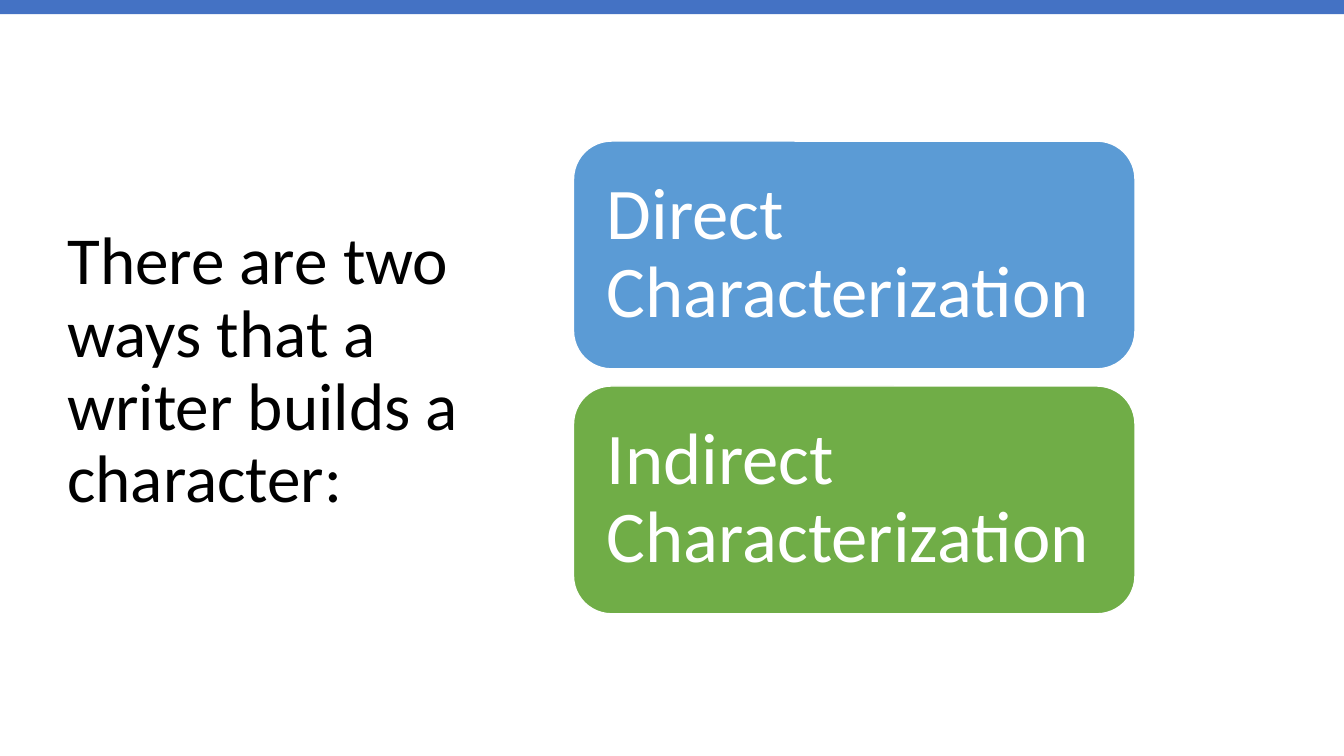
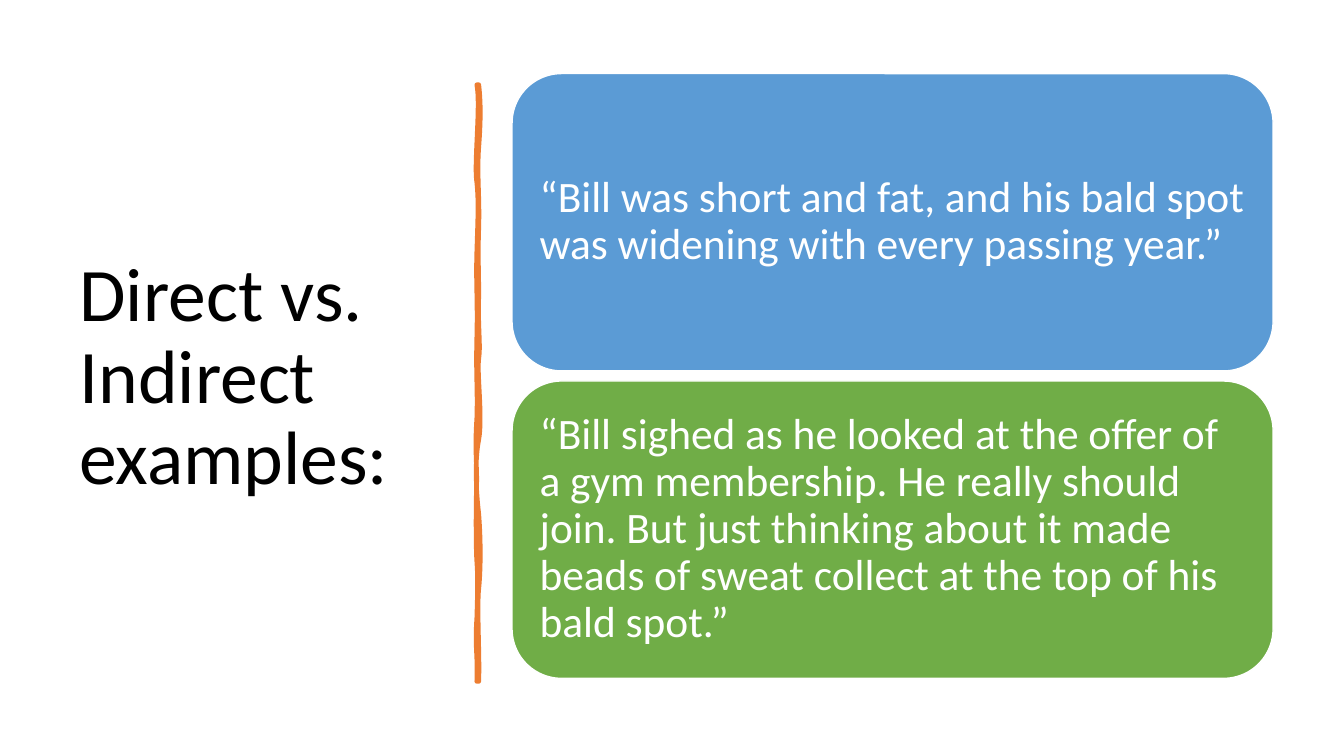
"""Build two slides on direct and indirect characterization."""
from dataclasses import dataclass

from lxml.etree import SubElement
from pptx import Presentation
from pptx.dml.color import RGBColor
from pptx.enum.shapes import MSO_SHAPE as Preset
from pptx.enum.text import MSO_ANCHOR as Anchor, PP_ALIGN as Align
from pptx.oxml.ns import qn
from pptx.util import Emu, Pt

PX = 9144
SLIDE_WIDTH, SLIDE_HEIGHT = Emu(12192000), Emu(6858000)
FONT = "Calibri"
WHITE = RGBColor(0xFF, 0xFF, 0xFF)
BLACK = RGBColor(0x00, 0x00, 0x00)
BAND_BLUE = RGBColor(0x44, 0x72, 0xC4)
DIRECT_BLUE = RGBColor(0x5B, 0x9B, 0xD5)
INDIRECT_GREEN = RGBColor(0x70, 0xAD, 0x47)
STROKE_ORANGE = RGBColor(0xED, 0x7D, 0x31)


@dataclass(frozen=True)
class Box:
    left: int
    top: int
    width: int
    height: int

    def emu(self) -> tuple[int, int, int, int]:
        return self.left * PX, self.top * PX, self.width * PX, self.height * PX


@dataclass(frozen=True)
class CardStack:
    first: Box
    gap: int
    inset: int
    size: int
    texts: tuple[str, str]


@dataclass(frozen=True)
class Heading:
    box: Box
    text: str
    size: int


@dataclass(frozen=True)
class Curve:
    first_control: tuple[int, int]
    second_control: tuple[int, int]
    end: tuple[int, int]


WAYS_HEADING = Heading(
    Box(57, 68, 416, 602), "There are two ways that a writer builds a character:", 48)
WAYS = CardStack(
    Box(569, 140, 557, 226), 17, 22, 52,
    ("Direct Characterization", "Indirect Characterization"))
EXAMPLES_HEADING = Heading(Box(69, 70, 374, 611), "Direct vs. Indirect examples:", 54)
EXAMPLES = CardStack(
    Box(508, 73, 755, 295), 10, 13, 31,
    ("“Bill was short and fat, and his bald spot was widening with every passing year.”",
     "“Bill sighed as he looked at the offer of a gym membership. He really should join. "
     "But just thinking about it made beads of sweat collect at the top of his bald spot.”"))

STROKE_START = (475, 84)
STROKE_CURVES = (
    Curve((477, 102), (477, 119), (475, 146)),
    Curve((473, 173), (476, 195), (475, 226)),
    Curve((474, 257), (475, 262), (475, 294)),
    Curve((474, 325), (477, 342), (475, 356)),
    Curve((473, 370), (479, 414), (475, 436)),
    Curve((471, 457), (472, 484), (475, 510)),
    Curve((477, 536), (477, 564), (475, 584)),
    Curve((473, 603), (476, 650), (475, 676)),
    Curve((474, 676), (473, 676), (473, 676)),
    Curve((474, 646), (471, 644), (473, 613)),
    Curve((474, 583), (474, 570), (473, 557)),
    Curve((472, 544), (472, 495), (473, 477)),
    Curve((473, 459), (471, 445), (473, 415)),
    Curve((474, 386), (472, 373), (473, 335)),
    Curve((474, 298), (472, 281), (473, 250)),
    Curve((474, 218), (475, 200), (473, 181)),
    Curve((470, 163), (477, 104), (473, 84)),
)


def write_text(shape, text: str, *, size: int, color: RGBColor,
               inset: int | None = None) -> None:
    """Write left-aligned, vertically centred text into a shape."""
    frame = shape.text_frame
    frame.word_wrap = True
    frame.vertical_anchor = Anchor.MIDDLE
    if inset is not None:
        frame.margin_left = frame.margin_right = inset * PX
        frame.margin_top = frame.margin_bottom = inset * PX
    paragraph = frame.paragraphs[0]
    paragraph.alignment = Align.LEFT
    paragraph.line_spacing = 0.9
    run = paragraph.add_run()
    run.text = text
    run.font.name = FONT
    run.font.size = Pt(size)
    run.font.color.rgb = color


def paint(shape, fill: RGBColor, line: RGBColor | None = None, width: float = 1) -> None:
    """Give a shape a flat fill and an optional outline."""
    shape.shadow.inherit = False
    shape.fill.solid()
    shape.fill.fore_color.rgb = fill
    if line is None:
        shape.line.fill.background()
    else:
        shape.line.color.rgb = line
        shape.line.width = Pt(width)


def add_heading(slide, heading: Heading) -> None:
    """Add the heading beside the cards."""
    title = slide.shapes.add_textbox(*heading.box.emu())
    write_text(title, heading.text, size=heading.size, color=BLACK)


def add_cards(slide, stack: CardStack) -> None:
    """Stack the direct card above the indirect card."""
    first = stack.first
    for row, (text, fill) in enumerate(zip(stack.texts, (DIRECT_BLUE, INDIRECT_GREEN))):
        top = first.top + row * (first.height + stack.gap)
        box = Box(first.left, top, first.width, first.height)
        card = slide.shapes.add_shape(Preset.ROUNDED_RECTANGLE, *box.emu())
        paint(card, fill, WHITE)
        write_text(card, text, size=stack.size, color=WHITE, inset=stack.inset)


def add_band(slide) -> None:
    """Add the band along the top edge."""
    band = slide.shapes.add_shape(Preset.RECTANGLE, 0, 0, SLIDE_WIDTH, 14 * PX)
    paint(band, BAND_BLUE)


def add_divider_stroke(slide) -> None:
    """Draw the hand-drawn divider with curved edges."""
    builder = slide.shapes.build_freeform(*STROKE_START, scale=PX)
    builder.add_line_segments([curve.end for curve in STROKE_CURVES], close=True)
    stroke = builder.convert_to_shape()
    left, top = stroke.left // PX, stroke.top // PX
    segments = list(stroke.element.iter(qn("a:lnTo")))
    for segment, curve in zip(segments, STROKE_CURVES):
        segment.tag = qn("a:cubicBezTo")
        segment.clear()
        for x, y in (curve.first_control, curve.second_control, curve.end):
            SubElement(segment, qn("a:pt"), x=str(x - left), y=str(y - top))
    for surplus in segments[len(STROKE_CURVES):]:
        surplus.getparent().remove(surplus)
    paint(stroke, STROKE_ORANGE, STROKE_ORANGE, 3.25)


def main() -> None:
    """Build and save the presentation."""
    deck = Presentation()
    deck.slide_width = SLIDE_WIDTH
    deck.slide_height = SLIDE_HEIGHT
    blank = deck.slide_layouts[6]

    ways = deck.slides.add_slide(blank)
    add_heading(ways, WAYS_HEADING)
    add_band(ways)
    add_cards(ways, WAYS)

    examples = deck.slides.add_slide(blank)
    add_heading(examples, EXAMPLES_HEADING)
    add_divider_stroke(examples)
    add_cards(examples, EXAMPLES)

    deck.save("out.pptx")


if __name__ == "__main__":
    main()
